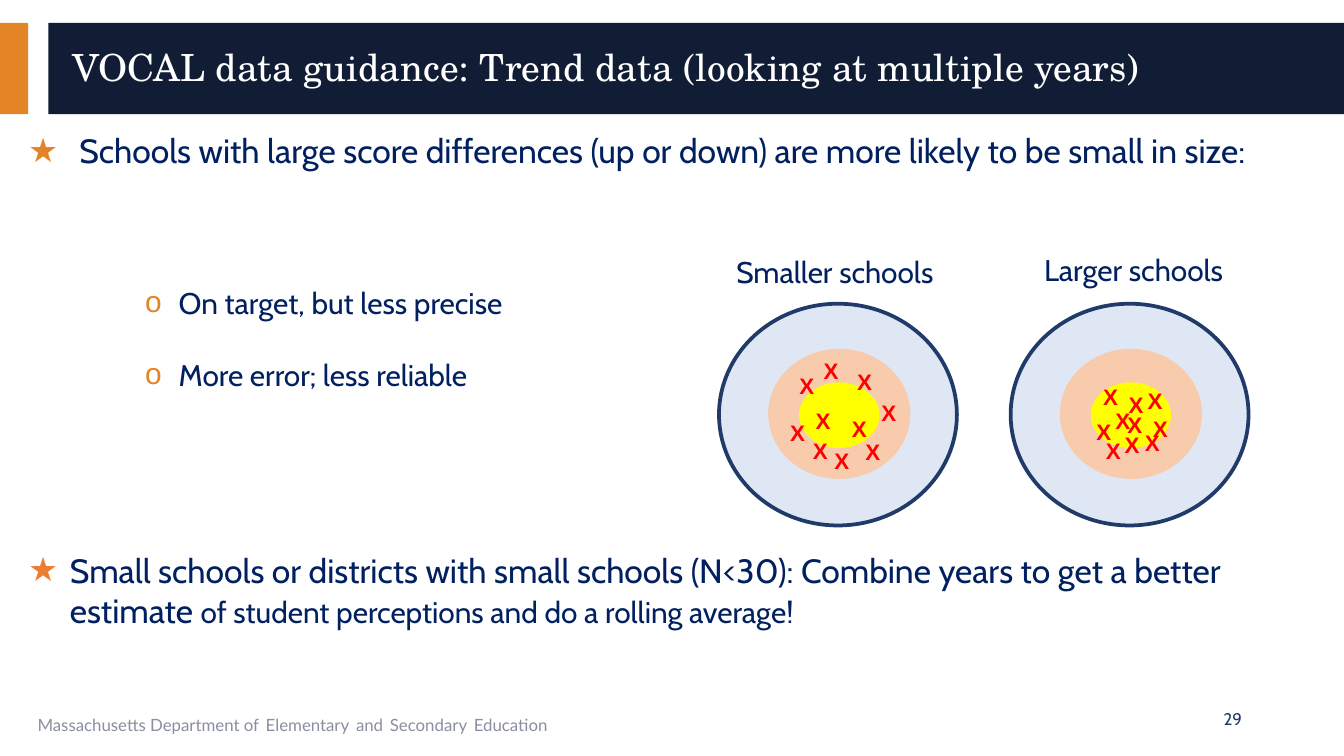
from dataclasses import dataclass

from lxml import etree
from pptx import Presentation
from pptx.dml.color import RGBColor
from pptx.enum.shapes import MSO_SHAPE
from pptx.enum.text import MSO_ANCHOR, PP_ALIGN
from pptx.oxml.ns import qn
from pptx.util import Inches, Pt

RECTANGLE, DONUT, OVAL = MSO_SHAPE.RECTANGLE, MSO_SHAPE.DONUT, MSO_SHAPE.OVAL
TOP, MIDDLE = MSO_ANCHOR.TOP, MSO_ANCHOR.MIDDLE
LEFT, RIGHT = PP_ALIGN.LEFT, PP_ALIGN.RIGHT


@dataclass(frozen=True)
class Theme:
    orange: str = "E38526"
    light_orange: str = "ED7D31"
    midnight: str = "101D34"
    navy: str = "203B6A"
    text: str = "002060"
    white: str = "FFFFFF"
    gray: str = "8A8FA0"
    outer_ring: str = "DFE7F5"
    inner_ring: str = "F8CBAD"
    bullseye: str = "FFFF00"
    mark: str = "FF0000"
    body_font: str = "Cabin"
    title_font: str = "TeX Gyre Schola"
    footer_font: str = "Lato"
    mark_font: str = "Arial"
    title_size: int = 20
    large: int = 18
    medium: int = 16
    gap_size: int = 14
    mark_size: int = 12
    small: int = 9


THEME = Theme()
SLIDE_WIDTH = 10
SLIDE_HEIGHT = SLIDE_WIDTH * 9 / 16
FRAME_INSETS = (0.07, 0.04, 0.07, 0.04)
LABEL_INSETS = (0.1, 0.05, 0, 0.05)

# Top-left corners of the X marks, measured from the corner of the target.
SCATTERED_MARKS = [
    (0.93, 0.43), (0.62, 0.72), (0.89, 0.78), (0.99, 0.95), (0.68, 0.35),
    (0.6, 0.94), (0.5, 0.46), (0.76, 1.02), (1.11, 0.66), (0.43, 0.81),
]
CLUSTERED_MARKS = [
    (0.92, 0.57), (0.68, 0.72), (0.77, 0.75), (0.9, 0.88), (0.78, 0.6),
    (0.61, 0.94), (0.59, 0.54), (0.75, 0.9), (0.96, 0.78), (0.54, 0.8),
]


def add_run(paragraph, text, *, size, color, font=THEME.body_font, bold=False):
    run = paragraph.add_run()
    run.text = text
    run.font.name = font
    run.font.size = Pt(size)
    run.font.bold = bold
    run.font.color.rgb = RGBColor.from_string(color)


def set_bullet(paragraph, character, color, margin, hanging):
    properties = paragraph._p.get_or_add_pPr()
    properties.set("marL", str(Inches(margin)))
    properties.set("indent", str(-Inches(hanging)))
    bullet_color = etree.SubElement(properties, qn("a:buClr"))
    etree.SubElement(bullet_color, qn("a:srgbClr")).set("val", color)
    etree.SubElement(properties, qn("a:buFont")).set("typeface", THEME.mark_font)
    etree.SubElement(properties, qn("a:buChar")).set("char", character)


class SlideBuilder:
    def __init__(self, slide, theme):
        self.slide = slide
        self.theme = theme

    def shape(self, kind, box, fill, line=None, parent=None):
        shapes = (parent or self.slide).shapes
        shape = shapes.add_shape(kind, *map(Inches, box))
        shape.shadow.inherit = False
        shape.fill.solid()
        shape.fill.fore_color.rgb = RGBColor.from_string(fill)
        if line:
            shape.line.color.rgb = RGBColor.from_string(line)
            shape.line.width = Pt(2)
        else:
            shape.line.fill.background()

    def frame(self, box, insets=FRAME_INSETS, anchor=TOP, parent=None):
        """Add an empty text box and return its text frame."""
        shapes = (parent or self.slide).shapes
        frame = shapes.add_textbox(*map(Inches, box)).text_frame
        frame.word_wrap = True
        frame.vertical_anchor = anchor
        (frame.margin_left, frame.margin_top,
         frame.margin_right, frame.margin_bottom) = map(Inches, insets)
        return frame

    def text(self, text, box, *, insets=FRAME_INSETS, anchor=TOP, align=LEFT,
             spacing=1.0, parent=None, **font_format):
        paragraph = self.frame(box, insets, anchor, parent).paragraphs[0]
        paragraph.alignment = align
        paragraph.line_spacing = spacing
        add_run(paragraph, text, **font_format)

    def target(self, left, top, marks):
        theme = self.theme
        group = self.slide.shapes.add_group_shape()
        rings = [
            (DONUT, (0, 0, 1.77, 1.65), theme.outer_ring, theme.navy),
            (DONUT, (0.38, 0.35, 1.03, 0.94), theme.inner_ring, theme.inner_ring),
            (OVAL, (0.61, 0.6, 0.57, 0.46), theme.bullseye, theme.bullseye),
        ]
        for kind, (x, y, width, height), fill, line in rings:
            self.shape(kind, (left + x, top + y, width, height), fill, line, group)
        for x, y in marks:
            self.text("X", (left + x, top + y, 0.21, 0.21), insets=LABEL_INSETS,
                      parent=group, size=theme.mark_size, color=theme.mark,
                      font=theme.mark_font, bold=True)

    def footer(self, words, box):
        """Write small words parted by wider spaces."""
        theme = self.theme
        paragraph = self.frame(box).paragraphs[0]
        for index, word in enumerate(words):
            if index:
                add_run(paragraph, " ", size=theme.gap_size, color=theme.navy,
                        font=theme.footer_font)
            add_run(paragraph, word, size=theme.small, color=theme.gray,
                    font=theme.footer_font)

    def body(self, items, box):
        frame = self.frame(box)
        for index, (runs, bullet, before, after, spacing) in enumerate(items):
            paragraph = frame.add_paragraph() if index else frame.paragraphs[0]
            set_bullet(paragraph, *bullet)
            paragraph.space_before = Pt(before)
            paragraph.space_after = Pt(after)
            paragraph.line_spacing = spacing
            for text, size in runs:
                add_run(paragraph, text, size=size, color=self.theme.text)


def main():
    presentation = Presentation()
    presentation.slide_width = Inches(SLIDE_WIDTH)
    presentation.slide_height = Inches(SLIDE_HEIGHT)
    slide = presentation.slides.add_slide(presentation.slide_layouts[6])
    theme = THEME
    builder = SlideBuilder(slide, theme)

    builder.shape(RECTANGLE, (0, 0.17, 0.21, 0.68), theme.orange)
    builder.shape(RECTANGLE, (0.36, 0.17, 9.64, 0.68), theme.midnight)
    builder.footer(["Massachusetts Department of", "Elementary", "and",
                    "Secondary", "Education"], (0.21, 5.21, 6.33, 0.3))
    builder.text("VOCAL data guidance: Trend data (looking at multiple years)",
                 (0.47, 0.24, 9.33, 0.56), anchor=MIDDLE, spacing=0.9,
                 size=theme.title_size, color=theme.white, font=theme.title_font)

    circle = ("o", theme.orange, 1.12, 0.25)
    builder.body([
        ([("Schools with large score differences (up or down) are more likely "
           "to be small in size:", theme.large)],
         ("★", theme.orange, 0.38, 0.38), 0, 6, 1.0),
        ([("On target, but less precise", theme.medium)], circle, 36, 0, 2.0),
        ([("More error; less reliable", theme.medium)], circle, 0, 0, 2.0),
        ([("Small schools or districts with small schools (N<30): Combine years "
           "to get a better estimate ", theme.large),
          ("of student perceptions and do a rolling average!", theme.medium)],
         ("★", theme.light_orange, 0.31, 0.31), 84.5, 0, 1.0),
    ], (0.14, 0.93, 9.86, 4.14))

    builder.text("29", (9, 5.21, 0.31, 0.28), anchor=MIDDLE, align=RIGHT,
                 size=theme.small, color=theme.navy)

    builder.target(5.35, 2.26, SCATTERED_MARKS)
    builder.target(7.52, 2.26, CLUSTERED_MARKS)
    for label, box in [("Smaller schools", (5.38, 1.84, 1.78, 0.37)),
                       ("Larger schools", (7.67, 1.82, 1.67, 0.37))]:
        builder.text(label, box, insets=LABEL_INSETS, size=theme.medium,
                     color=theme.text)

    presentation.save("out.pptx")


if __name__ == "__main__":
    main()
